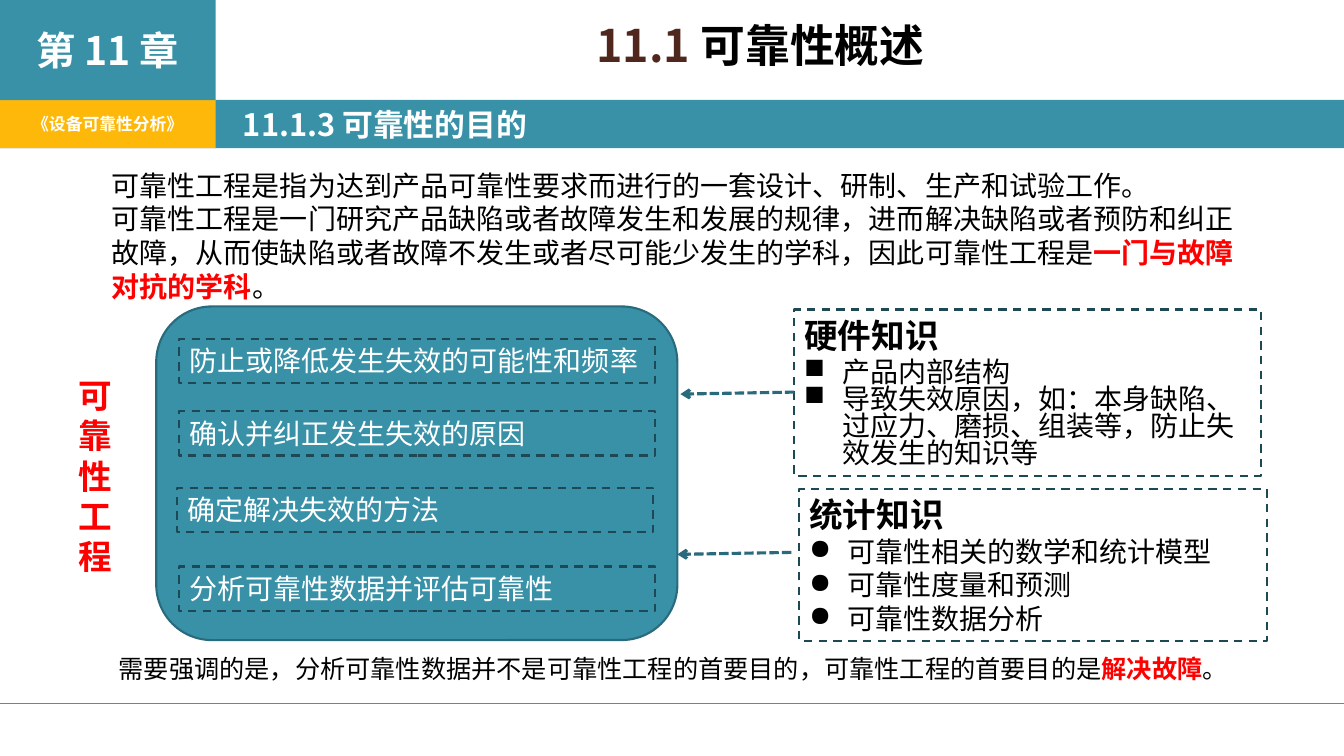
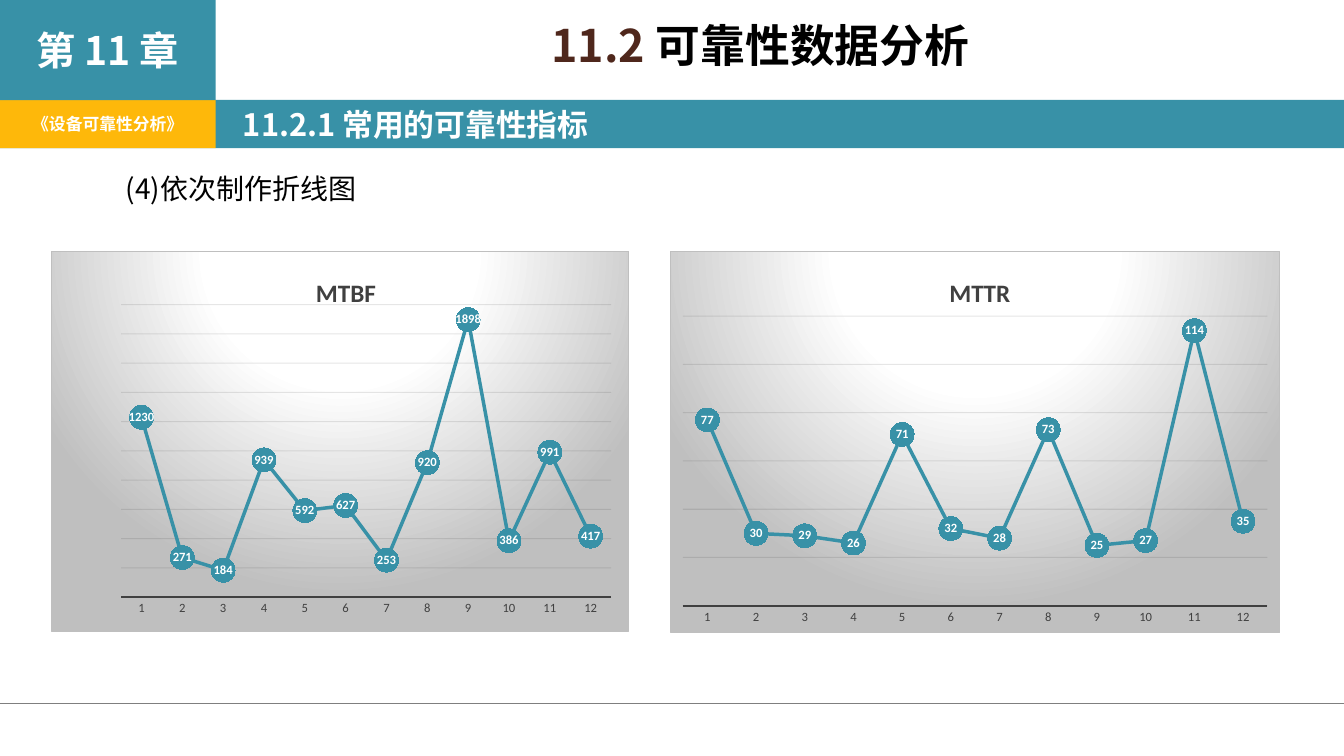
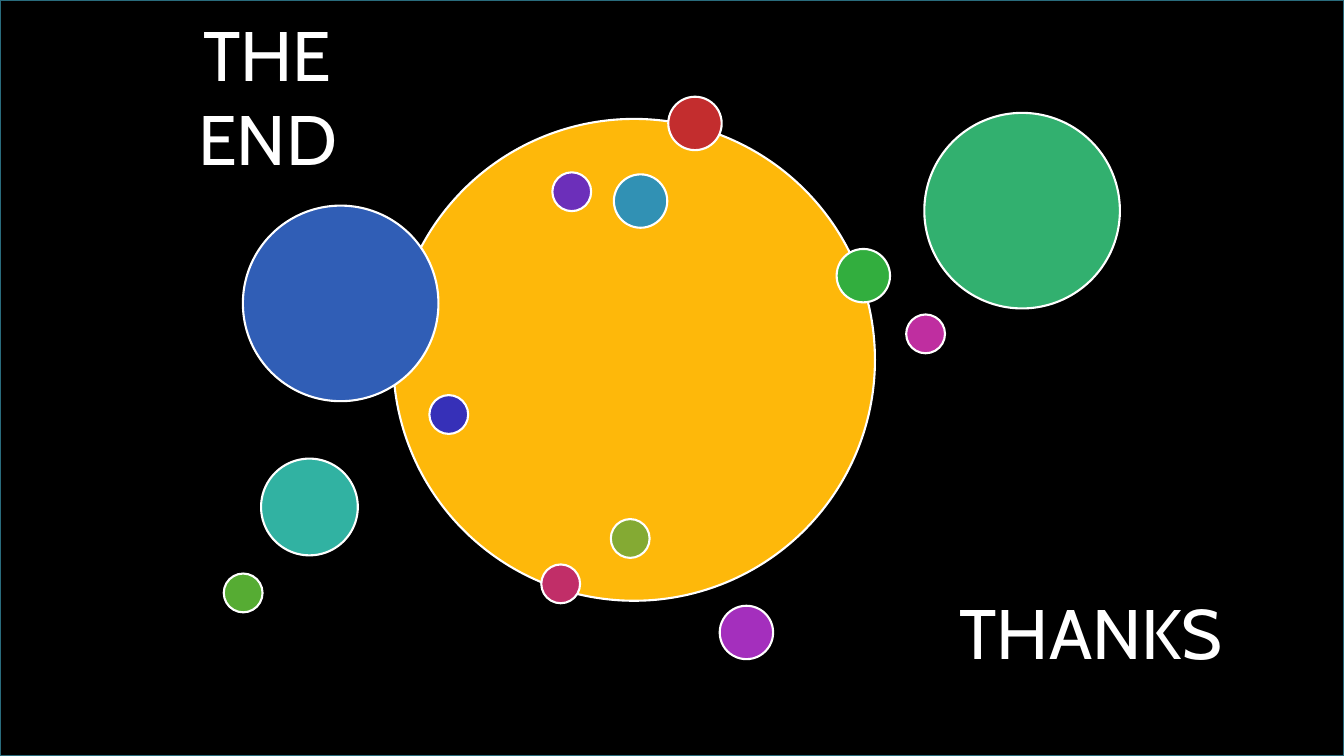
import pptx
import pptx.chart.data
import pptx.dml.color
import pptx.enum.chart
import pptx.enum.dml
import pptx.enum.lang
import pptx.enum.shapes
import pptx.enum.text
import pptx.oxml
import pptx.oxml.ns
import pptx.util

# Shared style; one grid cell is a tenth of an inch
CELL = 0.1
COLUMNS, ROWS = 133.33, 75
TEAL, EDGE, DARK, GOLD = "3891A7", "296B7C", "1C4954", "FEB80A"
WHITE, BLACK, RED, BROWN, GREY = "FFFFFF", "000000", "FF0000", "4F271C", "404040"
BODY, HEAD, CLOSING = "Calibri", "Noto Sans CJK SC", "Cabin"

SHAPE = pptx.enum.shapes.MSO_SHAPE
ALIGN = pptx.enum.text.PP_ALIGN
ANCHOR = pptx.enum.text.MSO_ANCHOR
DASH = pptx.enum.dml.MSO_LINE
qn = pptx.oxml.ns.qn
Pt = pptx.util.Pt

CHART_BACKGROUND = """
<c:spPr %s>
  <a:gradFill>
    <a:gsLst>
      <a:gs pos="0"><a:srgbClr val="FFFFFF"/></a:gs>
      <a:gs pos="39000"><a:srgbClr val="FFFFFF"/></a:gs>
      <a:gs pos="100000"><a:srgbClr val="BFBFBF"/></a:gs>
    </a:gsLst>
    <a:path path="circle"><a:fillToRect l="50000" t="-80000" r="50000" b="180000"/></a:path>
  </a:gradFill>
  <a:ln w="9525"><a:solidFill><a:srgbClr val="BFBFBF"/></a:solidFill></a:ln>
</c:spPr>""" % pptx.oxml.ns.nsdecls("c", "a")


def grid(*cells):
    return [pptx.util.Inches(cell * CELL) for cell in cells]


def rgb(color):
    return pptx.dml.color.RGBColor.from_string(color)


def child(parent, tag, **attributes):
    element = parent.makeelement(qn(tag), attributes)
    parent.append(element)
    return element


def paint(shape, fill=None, line=None, width=1.5, dash=None):
    shape.shadow.inherit = False
    if fill:
        shape.fill.solid()
        shape.fill.fore_color.rgb = rgb(fill)
    else:
        shape.fill.background()
    if line:
        stroke(shape.line, line, width, dash)
    else:
        shape.line.fill.background()


def stroke(line, color, width, dash=None):
    line.color.rgb = rgb(color)
    line.width = Pt(width)
    if dash:
        line.dash_style = dash


def set_font(font, size, color, bold=False, name=BODY):
    font.size, font.bold, font.name = Pt(size), bold, name
    font.color.rgb = rgb(color)


def write(shape, text, size=20, color=BLACK, bold=False, font=BODY, accent=RED,
          align=ALIGN.LEFT, anchor=ANCHOR.TOP, spacing=None, bullet=None,
          left=1, right=1):
    """Append one paragraph; parts between bars are bold in the accent colour."""
    frame = shape.text_frame
    frame.word_wrap = True
    frame.auto_size = pptx.enum.text.MSO_AUTO_SIZE.NONE
    frame.vertical_anchor = anchor
    frame.margin_left, frame.margin_right = grid(left, right)
    frame.margin_top = frame.margin_bottom = grid(0.5)[0]
    paragraph = frame.add_paragraph() if frame.text else frame.paragraphs[0]
    paragraph.alignment = align
    if spacing:
        paragraph.line_spacing = spacing
    if bullet:
        properties = paragraph._p.get_or_add_pPr()
        indent = grid(3.75)[0]
        properties.set("marL", str(indent))
        properties.set("indent", str(-indent))
        child(properties, "a:buChar", char=bullet)
    for index, part in enumerate(text.split("|")):
        if not part:
            continue
        marked = index % 2 == 1
        run = paragraph.add_run()
        run.text = part
        set_font(run.font, size, accent if marked else color, bold or marked, font)
        run.font.language_id = pptx.enum.lang.MSO_LANGUAGE_ID.SIMPLIFIED_CHINESE
        child(run.font._element, "a:ea", typeface=font)


def set_layout(element, index, **shares):
    """Fix a chart part by shares of the chart's size."""
    for old in element.findall(qn("c:layout")):
        element.remove(old)
    layout = element.makeelement(qn("c:layout"), {})
    element.insert(index, layout)
    manual = child(layout, "c:manualLayout")
    if "w" in shares:
        child(manual, "c:layoutTarget", val="inner")
    for mode in ("xMode", "yMode"):
        child(manual, "c:" + mode, val="edge")
    for name, share in shares.items():
        child(manual, "c:" + name, val=str(share))


class Deck:
    def __init__(self):
        self.presentation = pptx.Presentation()
        size = grid(COLUMNS, ROWS)
        self.presentation.slide_width, self.presentation.slide_height = size
        self.slide = None

    def new_slide(self, title, place, **format):
        self.slide = self.presentation.slides.add_slide(
            self.presentation.slide_layouts.get_by_name("Title Only"))
        shape = self.slide.shapes.title
        shape.left, shape.top, shape.width, shape.height = grid(*place)
        write(shape, title, **{"align": ALIGN.CENTER, **format})

    def content_slide(self, title, subtitle):
        self.new_slide(title, (23.1, 1.9, 104.7, 8), size=32, bold=True,
                       font=HEAD, accent=BROWN, spacing=0.9)
        label = dict(color=WHITE, bold=True, font=HEAD, anchor=ANCHOR.MIDDLE)
        # Chapter corner, book name and section band
        band = self.box((0, 9.9, COLUMNS, 4.8), fill=TEAL)
        write(band, subtitle, size=22, left=24.1, **label)
        book = self.box((0, 9.9, 21.4, 4.8), fill=GOLD)
        write(book, "《设备可靠性分析》", size=12, align=ALIGN.CENTER, **label)
        chapter = self.box((0, 0, 21.4, 9.95), fill=TEAL)
        write(chapter, "第 11 章", size=28, align=ALIGN.CENTER, **label)
        # Footer rule
        self.line((0, 69.8), (COLUMNS, 69.8), "7F7F7F", 0.79)

    def box(self, place, kind=SHAPE.RECTANGLE, **look):
        shape = self.slide.shapes.add_shape(kind, *grid(*place))
        paint(shape, **look)
        return shape

    def dashed_box(self, place):
        return self.box(place, line=DARK, dash=DASH.DASH)

    def text(self, place, text, **format):
        shape = self.slide.shapes.add_textbox(*grid(*place))
        write(shape, text, **format)

    def line(self, start, end, color, width, dash=None, arrow=False):
        connector = self.slide.shapes.add_connector(
            pptx.enum.shapes.MSO_CONNECTOR.STRAIGHT, *grid(*start, *end))
        stroke(connector.line, color, width, dash)
        if arrow:
            child(connector.line._get_or_add_ln(), "a:tailEnd", type="arrow")
        child(connector._element.spPr, "a:effectLst")

    def knowledge(self, place, heading, items, bullet, spacings):
        shape = self.dashed_box(place)
        write(shape, heading, size=24, bold=True)
        for item, spacing in zip(items, spacings):
            write(shape, item, bullet=bullet, spacing=spacing)

    def line_chart(self, place, title, values, top, step, plot):
        data = pptx.chart.data.CategoryChartData()
        data.categories = [str(month) for month in range(1, len(values) + 1)]
        data.add_series(title, values)
        chart = self.slide.shapes.add_chart(
            pptx.enum.chart.XL_CHART_TYPE.LINE_MARKERS, *grid(*place), data).chart
        set_font(chart.font, 10, BLACK)
        chart.has_legend = False
        # Title, plot area and background
        chart.has_title = True
        chart.chart_title.include_in_layout = False
        heading = chart.chart_title.text_frame
        heading.text = title
        set_font(heading.paragraphs[0].runs[0].font, 18, GREY, True)
        space = chart.element
        set_layout(space.find(".//" + qn("c:title")), 1, x=0.45, y=0.05)
        set_layout(space.find(".//" + qn("c:plotArea")), 0, **dict(zip("xywh", plot)))
        space.find(qn("c:chart")).addnext(pptx.oxml.parse_xml(CHART_BACKGROUND))
        # Axes
        months, scale = chart.category_axis, chart.value_axis
        months.major_tick_mark = pptx.enum.chart.XL_TICK_MARK.NONE
        set_font(months.tick_labels.font, 9, GREY)
        stroke(months.format.line, GREY, 1.5)
        scale.minimum_scale, scale.maximum_scale, scale.major_unit = 0, top, step
        scale.has_major_gridlines = True
        stroke(scale.major_gridlines.format.line, "0D0D0D", 0.75)
        grid_color = space.find(".//" + qn("c:majorGridlines")).find(".//" + qn("a:srgbClr"))
        child(grid_color, "a:alpha", val="10000")
        scale.visible = False
        # Series, markers and labels
        chart.plots[0].vary_by_categories = False
        series = chart.plots[0].series[0]
        series.smooth = False
        stroke(series.format.line, TEAL, 2.5)
        marker = series.marker
        marker.style, marker.size = pptx.enum.chart.XL_MARKER_STYLE.CIRCLE, 17
        marker.format.fill.solid()
        marker.format.fill.fore_color.rgb = rgb(TEAL)
        marker.format.line.fill.background()
        labels = series.data_labels
        labels.show_value = True
        labels.position = pptx.enum.chart.XL_LABEL_POSITION.CENTER
        set_font(labels.font, 9, WHITE, True)


def purpose_slide(deck):
    deck.content_slide("|11.1 |可靠性概述", "11.1.3 可靠性的目的")
    # Goals
    deck.box((15.5, 30.4, 51.7, 33.1), SHAPE.ROUNDED_RECTANGLE, fill=TEAL, line=EDGE)
    goals = [(17.8, 33.6, "防止或降低发生失效的可能性和频率"),
             (17.8, 40.8, "确认并纠正发生失效的原因"),
             (17.6, 48.4, "确定解决失效的方法"),
             (17.8, 56.2, "分析可靠性数据并评估可靠性")]
    for left, top, goal in goals:
        write(deck.dashed_box((left, top, 47.2, 4.4)), goal, color=WHITE)
    deck.text((6.8, 36.7, 5, 21.2), "可靠性工程", size=24, color=RED, bold=True)
    # Introduction and conclusion
    introduction = deck.slide.shapes.add_textbox(*grid(10.1, 16.2, 114.9, 14.5))
    write(introduction, "可靠性工程是指为达到产品可靠性要求而进行的一套设计、研制、生产和试验工作。")
    write(introduction, "可靠性工程是一门研究产品缺陷或者故障发生和发展的规律，进而解决缺陷或者预防和纠正"
          "故障，从而使缺陷或者故障不发生或者尽可能少发生的学科，因此可靠性工程是"
          "|一门与故障对抗的学科|。")
    deck.text((10.8, 64.3, 112.8, 4), "需要强调的是，分析可靠性数据并不是可靠性工程的首要目的，"
              "可靠性工程的首要目的是|解决故障|。", size=18)
    # Knowledge that feeds the goals
    deck.knowledge((78.8, 30.7, 46.3, 16.5), "硬件知识",
                   ["产品内部结构",
                    "导致失效原因，如：本身缺陷、过应力、磨损、组装等，防止失效发生的知识等"],
                   "■", [None, 0.8])
    deck.knowledge((79.3, 48.5, 46.4, 15.1), "统计知识",
                   ["可靠性相关的数学和统计模型", "可靠性度量和预测", "可靠性数据分析"],
                   "●", [None] * 3)
    for left, top in [(67.5, 39.1), (67.2, 55)]:
        deck.line((left + 11.3, top - 0.2), (left, top), EDGE, 2.25,
                  DASH.SQUARE_DOT, arrow=True)


def chart_slide(deck):
    deck.content_slide("|11.2 |可靠性数据分析", "11.2.1 常用的可靠性指标")
    deck.text((11.5, 17, 25.1, 4.4), "(4)依次制作折线图", font=HEAD, spacing=0.85)
    deck.line_chart((5.1, 24.9, 57.3, 37.8), "MTBF",
                    [1230, 271, 184, 939, 592, 627, 253, 920, 1898, 386, 991, 417],
                    2000, 200, (0.12, 0.14, 0.85, 0.77))
    deck.line_chart((66.5, 24.9, 60.5, 37.9), "MTTR",
                    [77, 30, 29, 26, 71, 32, 28, 73, 25, 27, 114, 35],
                    120, 20, (0.02, 0.17, 0.96, 0.76))


def closing_slide(deck):
    closing = dict(size=50, color=WHITE, font=CLOSING, anchor=ANCHOR.MIDDLE)
    deck.new_slide("THE END", (10.8, 3.6, 31.5, 11.8), left=5, right=5, **closing)
    background = deck.slide.background.fill
    background.solid()
    background.fore_color.rgb = rgb(BLACK)
    deck.box((0, 0, COLUMNS, ROWS), line=EDGE)
    deck.text((92.6, 58.4, 31.5, 8.5), "THANKS", left=2.6, **closing)
    # Circles by diameter
    circles = {
        47.8: [(39, 11.8, GOLD)],
        19.4: [(24.1, 20.4, "305EB6"), (91.7, 11.2, "32B06F")],
        9.6: [(25.9, 45.5, "31B2A2")],
        5.3: [(66.3, 9.6, "C32D2E"), (71.4, 60.1, "A42FBD"),
              (60.9, 17.3, "3191B4"), (83, 24.7, "32AE3E")],
        3.85: [(53.7, 56, "C12E68"), (89.9, 31.2, "BF2EA0"), (54.8, 17.1, "6C2FBA"),
               (42.6, 39.2, "3630B8"), (22.2, 56.9, "56AC33"), (60.6, 51.5, "84AA33")],
    }
    for diameter, spots in circles.items():
        for left, top, color in spots:
            deck.box((left, top, diameter, diameter), SHAPE.OVAL, fill=color, line=WHITE)


def main():
    deck = Deck()
    purpose_slide(deck)
    chart_slide(deck)
    closing_slide(deck)
    deck.presentation.save("out.pptx")


if __name__ == "__main__":
    main()
